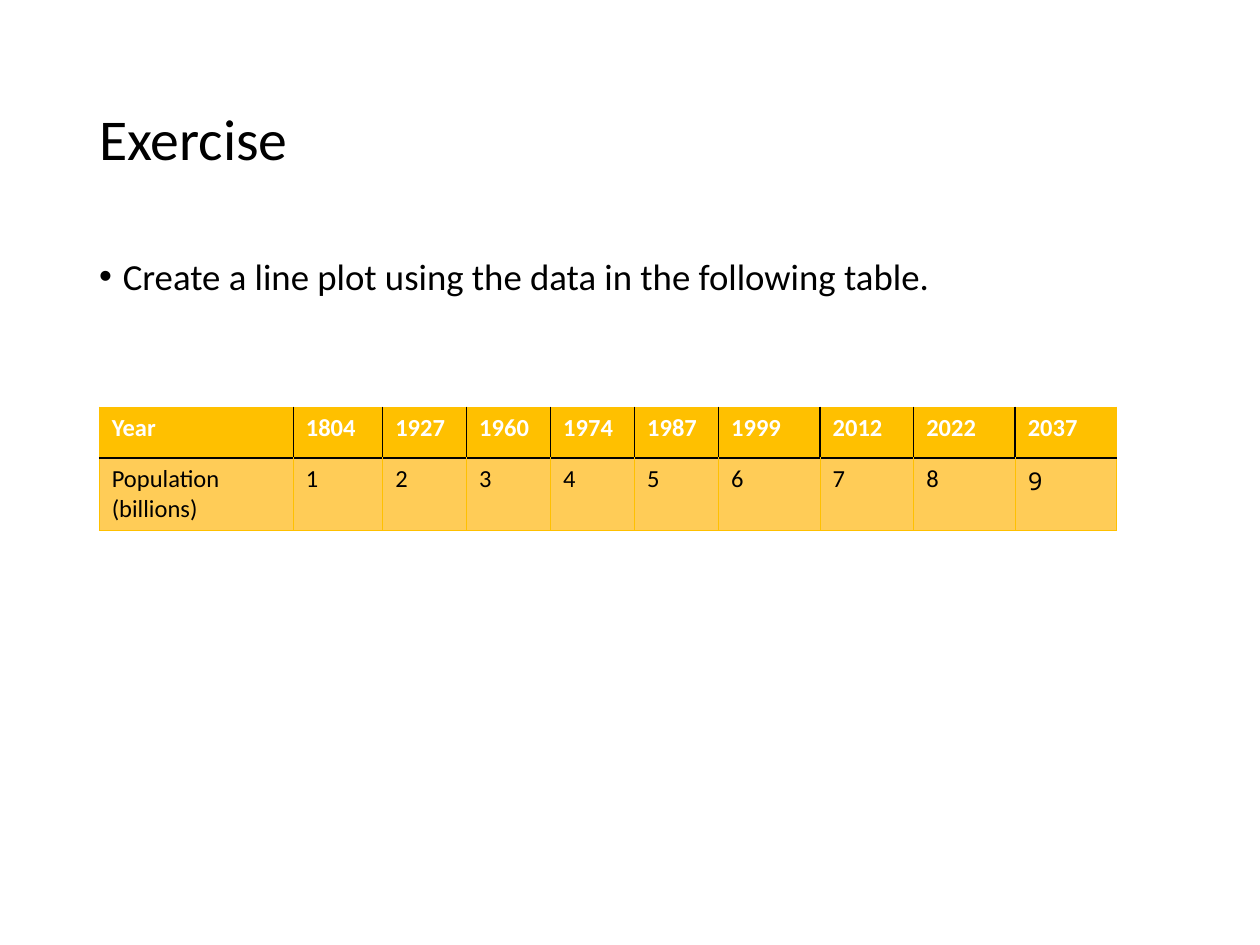
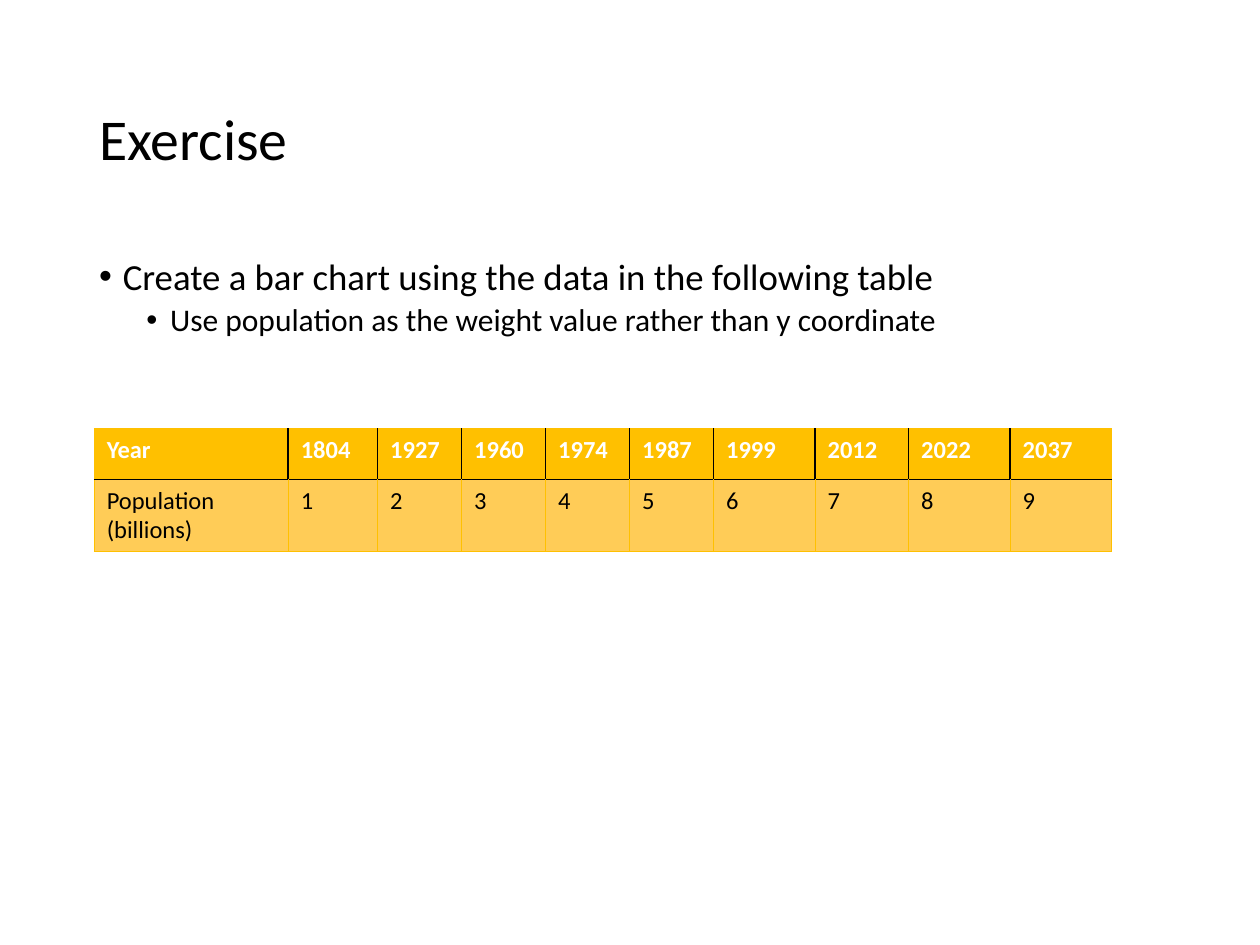
from dataclasses import dataclass

from lxml.etree import SubElement
from pptx import Presentation
from pptx.dml.color import RGBColor
from pptx.enum.text import MSO_ANCHOR as Anchor, MSO_AUTO_SIZE as AutoSize, PP_ALIGN as Align
from pptx.oxml import parse_xml
from pptx.oxml.ns import nsdecls, qn
from pptx.util import Pt


@dataclass(frozen=True)
class Theme:
    font: str = "Calibri"
    mono_font: str = "Noto Sans Mono"
    ink: str = "000000"
    paper: str = "FFFFFF"
    gold: str = "FFC000"
    pale_gold: str = "FFCC57"
    title_size: float = 33
    list_sizes: tuple = (21, 18)
    table_size: float = 14
    line_spacing: float = 0.9


THEME = Theme()

# Shared geometry, in points
LEFT, WIDTH = 49.5, 620.6
BULLET_INDENT, LEVEL_STEP = 13.5, 27
COLUMN_WIDTHS = [110.9, 51.1] + [48] * 4 + [58, 53.5, 58, 58]
ROW_HEIGHT, TABLE_HEIGHT = 29.2, 70

POPULATION = [
    ["Year", "1804", "1927", "1960", "1974", "1987", "1999", "2012", "2022", "2037"],
    ["Population\n(billions)"] + [str(billions) for billions in range(1, 10)],
]


def write_text(para, text, size, font=THEME.font, color=THEME.ink, bold=False,
               align=Align.LEFT, line_spacing=1.0, before=0):
    para.alignment = align
    para.line_spacing = line_spacing
    para.space_before = Pt(before)
    span = para.add_run()
    span.text = text
    span.font.name = font
    span.font.size = Pt(size)
    span.font.bold = bold
    span.font.color.rgb = RGBColor.from_string(color)


def add_bullet(para, level):
    para.level = level
    properties = para._p.get_or_add_pPr()
    properties.set("marL", str(Pt(BULLET_INDENT + LEVEL_STEP * level)))
    properties.set("indent", str(-Pt(BULLET_INDENT)))
    SubElement(properties, qn("a:buFont"), typeface="Arial")
    SubElement(properties, qn("a:buChar"), char="•")


def set_borders(cell, borders):
    """Draw the given sides; borders maps L, R, T, B to (color, width)."""
    properties = cell._tc.get_or_add_tcPr()
    sides = [side for side in "LRTB" if side in borders]
    for position, side in enumerate(sides):
        color, width = borders[side]
        properties.insert(position, parse_xml(
            f'<a:ln{side} {nsdecls("a")} w="{Pt(width)}"><a:solidFill>'
            f'<a:srgbClr val="{color}"/></a:solidFill></a:ln{side}>'))


class SlideBuilder:
    def __init__(self, deck, theme):
        self.deck, self.theme = deck, theme
        self.page = None

    def add_page(self):
        self.page = self.deck.slides.add_slide(self.deck.slide_layouts[1])

    def place(self, box, top, height, anchor):
        box.left, box.top = Pt(LEFT), Pt(top)
        box.width, box.height = Pt(WIDTH), Pt(height)
        frame = box.text_frame
        frame.word_wrap = True
        frame.auto_size = AutoSize.NONE
        frame.vertical_anchor = anchor
        return frame

    def title(self, text):
        frame = self.place(self.page.shapes.title, 28.8, 104.4, Anchor.MIDDLE)
        write_text(frame.paragraphs[0], text, self.theme.title_size,
                   line_spacing=self.theme.line_spacing)

    def bullets(self, items, height):
        """Fill the body with (level, text) items."""
        frame = self.place(self.page.placeholders[1], 144, height, Anchor.TOP)
        for index, (level, text) in enumerate(items):
            para = frame.add_paragraph() if index else frame.paragraphs[0]
            add_bullet(para, level)
            write_text(para, text, self.theme.list_sizes[level],
                       line_spacing=self.theme.line_spacing,
                       before=3.75 if index else 0)

    def table(self, rows, left, top, last_font):
        box = self.page.shapes.add_table(
            len(rows), len(rows[0]), Pt(left), Pt(top),
            Pt(sum(COLUMN_WIDTHS)), Pt(ROW_HEIGHT * len(rows)))
        table = box.table
        table.first_row = table.horz_banding = False
        table._tbl.tblPr.remove(table._tbl.tblPr.find(qn("a:tableStyleId")))
        for column, width in zip(table.columns, COLUMN_WIDTHS):
            column.width = Pt(width)
        for row, values in enumerate(rows):
            for column, text in enumerate(values):
                is_last = (row, column) == (len(rows) - 1, len(values) - 1)
                self.fill_cell(table.cell(row, column), text, row == 0, column,
                               last_font if is_last else self.theme.font)
        box.height = Pt(TABLE_HEIGHT)  # the two-line label makes its row taller

    def fill_cell(self, cell, text, is_header, column, font):
        theme = self.theme
        cell.fill.solid()
        cell.fill.fore_color.rgb = RGBColor.from_string(
            theme.gold if is_header else theme.pale_gold)

        # Header: outer gold frame and a white rule; body: full gold grid
        gold_line = (theme.gold, 0.5)
        if is_header:
            borders = {"T": gold_line, "B": (theme.paper, 1)}
            if column == 0:
                borders["L"] = gold_line
            if column == len(COLUMN_WIDTHS) - 1:
                borders["R"] = gold_line
        else:
            borders = dict.fromkeys("LRB", gold_line)
        set_borders(cell, borders)

        for index, line in enumerate(text.split("\n")):
            frame = cell.text_frame
            para = frame.add_paragraph() if index else frame.paragraphs[0]
            write_text(para, line, theme.table_size, font=font, bold=is_header,
                       color=theme.paper if is_header else theme.ink,
                       align=Align.JUSTIFY if column else Align.LEFT)


def main():
    deck = Presentation()
    deck.slide_width, deck.slide_height = Pt(720), Pt(540)
    builder = SlideBuilder(deck, THEME)

    # Line plot exercise
    builder.add_page()
    builder.title("Exercise")
    builder.bullets([(0, "Create a line plot using the data in the following table.")],
                    height=60.5)
    builder.table(POPULATION, left=56.7, top=232.6, last_font=THEME.mono_font)

    # Bar chart exercise
    builder.add_page()
    builder.title("Exercise")
    builder.bullets([
        (0, "Create a bar chart using the data in the following table"),
        (1, "Use population as the weight value rather than y coordinate"),
    ], height=342.7)
    builder.table(POPULATION, left=53.8, top=244.8, last_font=THEME.font)

    deck.save("out.pptx")


if __name__ == "__main__":
    main()
